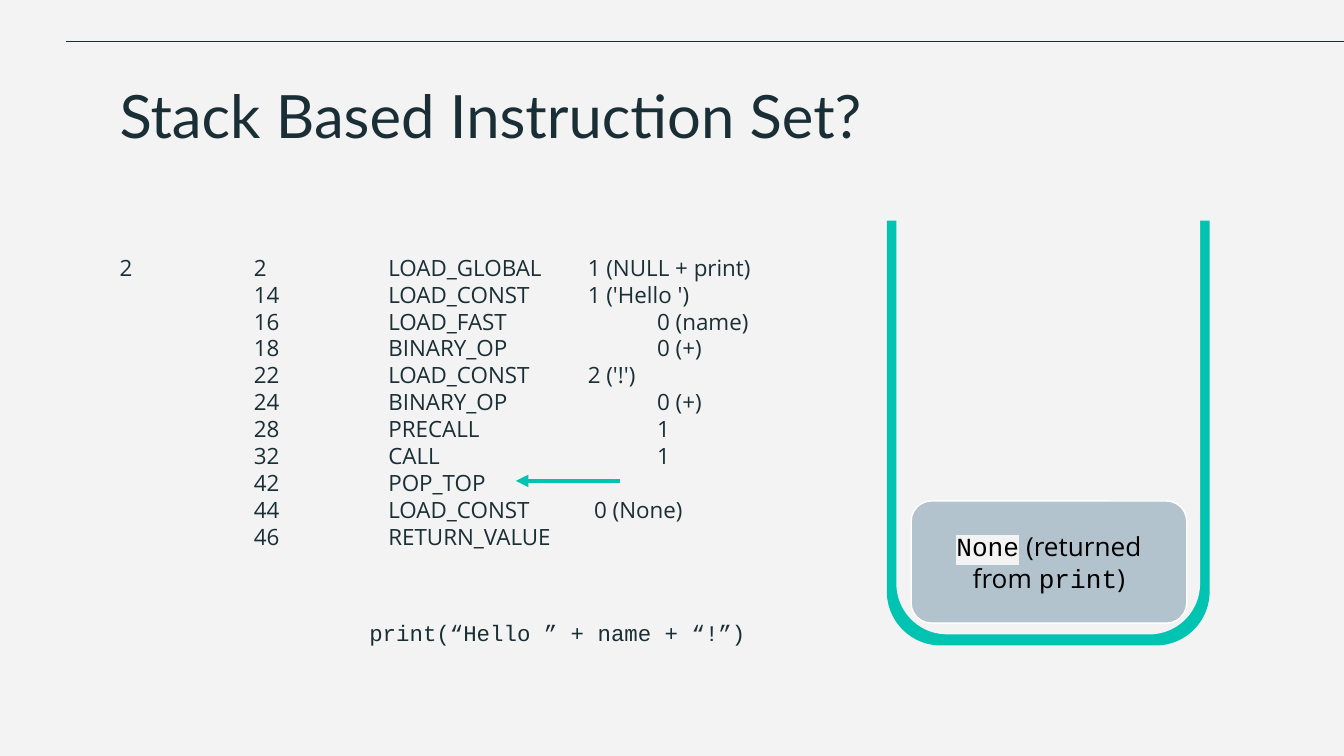
from lxml.etree import SubElement
from pptx import Presentation
from pptx.dml.color import RGBColor
from pptx.enum.shapes import MSO_CONNECTOR, MSO_SHAPE
from pptx.enum.text import MSO_ANCHOR, PP_ALIGN
from pptx.oxml.ns import qn
from pptx.util import Cm, Pt

INK, TEAL, PAPER, BLOCK = "1A2E35", "00C3B1", "F3F3F3", "B3C3CE"
HEADING, BODY, CODE = "Lato", "Open Sans", "Courier New"


def color(hex_value):
    return RGBColor.from_string(hex_value)


class SlideBuilder:
    def __init__(self, slide):
        self.slide = slide
        slide.background.fill.solid()
        slide.background.fill.fore_color.rgb = color(PAPER)

    def frame(self, text_frame):
        text_frame.word_wrap = True
        text_frame.margin_left = text_frame.margin_right = Cm(0.25)
        text_frame.margin_top = text_frame.margin_bottom = Cm(0.25)

    def style(self, run, font, size, ink=INK, highlight=None):
        run.font.size = Pt(size)
        run.font.color.rgb = color(ink)
        if highlight:
            mark = SubElement(run.font._element, qn("a:highlight"))
            SubElement(mark, qn("a:srgbClr"), val=highlight)
        run.font.name = font

    def text(self, box, lines, font, size):
        text_frame = self.slide.shapes.add_textbox(*map(Cm, box)).text_frame
        self.frame(text_frame)
        text_frame.text = "\n".join(lines)
        for paragraph in text_frame.paragraphs:
            for run in paragraph.runs:
                self.style(run, font, size)
        return text_frame

    def tabs(self, paragraph, stops):
        tab_list = SubElement(paragraph._p.get_or_add_pPr(), qn("a:tabLst"))
        for stop in stops:
            SubElement(tab_list, qn("a:tab"), pos=str(Cm(stop)), algn="l")

    def line(self, start, end, ink, width, arrow=False):
        line = self.slide.shapes.add_connector(
            MSO_CONNECTOR.STRAIGHT, *map(Cm, start + end))
        line.line.color.rgb = color(ink)
        line.line.width = Pt(width)
        if arrow:
            SubElement(line.line._get_or_add_ln(), qn("a:tailEnd"), type="triangle")
        SubElement(line._element.spPr, qn("a:effectLst"))

    def shape(self, kind, box, fill, adjustments, outline=None, rotation=0):
        shape = self.slide.shapes.add_shape(kind, *map(Cm, box))
        shape.shadow.inherit = False
        shape.rotation = rotation
        for index, value in enumerate(adjustments):
            shape.adjustments[index] = value
        shape.fill.solid()
        shape.fill.fore_color.rgb = color(fill)
        if outline:
            shape.line.color.rgb = color(outline)
            shape.line.width = Pt(0.75)
        else:
            shape.line.fill.background()
        return shape

    def stack_item(self, box, parts):
        item = self.shape(MSO_SHAPE.ROUNDED_RECTANGLE, box, BLOCK, [0.167], "FFFFFF")
        self.frame(item.text_frame)
        item.text_frame.vertical_anchor = MSO_ANCHOR.MIDDLE
        paragraph = item.text_frame.paragraphs[0]
        paragraph.alignment = PP_ALIGN.CENTER
        for words, font, highlight in parts:
            run = paragraph.add_run()
            run.text = words
            self.style(run, font, 14, "000000", highlight)


def main():
    presentation = Presentation()
    presentation.slide_width, presentation.slide_height = Cm(25.4), Cm(14.29)
    builder = SlideBuilder(presentation.slides.add_slide(presentation.slide_layouts[6]))

    # Header
    builder.line((1.24, 0.79), (25.4, 0.79), INK, 0.75)
    builder.text((2.01, 1.24, 21.41, 1.6), ["Stack Based Instruction Set?"], HEADING, 32)

    # Bytecode listing: source line, offset, instruction, argument, argument column
    near, middle, far = 8.85, 8.97, 10.16
    instructions = [
        ("2", "2", "LOAD_GLOBAL", "1 (NULL + print)", near),
        ("", "14", "LOAD_CONST", "1 ('Hello ')", near),
        ("", "16", "LOAD_FAST", "0 (name)", far),
        ("", "18", "BINARY_OP", "0 (+)", far),
        ("", "22", "LOAD_CONST", "2 ('!')", near),
        ("", "24", "BINARY_OP", "0 (+)", far),
        ("", "28", "PRECALL", "1", far),
        ("", "32", "CALL", "1", far),
        ("", "42", "POP_TOP", "", far),
        ("", "44", "LOAD_CONST", "0 (None)", middle),
        ("", "46", "RETURN_VALUE", "", far),
    ]
    listing = builder.text((2.01, 4.55, 12.52, 7.24),
                           ["\t".join(row[:4]).rstrip() for row in instructions], BODY, 12)
    for paragraph, row in zip(listing.paragraphs, instructions):
        builder.tabs(paragraph, (2.54, 5.08, row[4]))

    # Current instruction
    builder.line((11.71, 9.09), (9.75, 9.09), TEAL, 2.25, arrow=True)

    # Stack container, open at the top
    for box, fill in (((16.76, 4.17, 6.1, 8.03), TEAL), ((16.94, 3.94, 5.74, 8.05), PAPER)):
        builder.shape(MSO_SHAPE.ROUND_2_SAME_RECTANGLE, box, fill, (0.167, 0), rotation=180)

    # Value on the stack
    builder.stack_item((17.22, 9.47, 5.21, 2.31), [
        ("None", CODE, PAPER),
        (" (returned from ", BODY, None),
        ("print", CODE, None),
        (")", BODY, None),
    ])

    # Source statement
    builder.text((6.73, 11.46, 8.64, 1.32), ["print(“Hello ” + name + “!”)"], CODE, 12)

    presentation.save("out.pptx")


if __name__ == "__main__":
    main()
